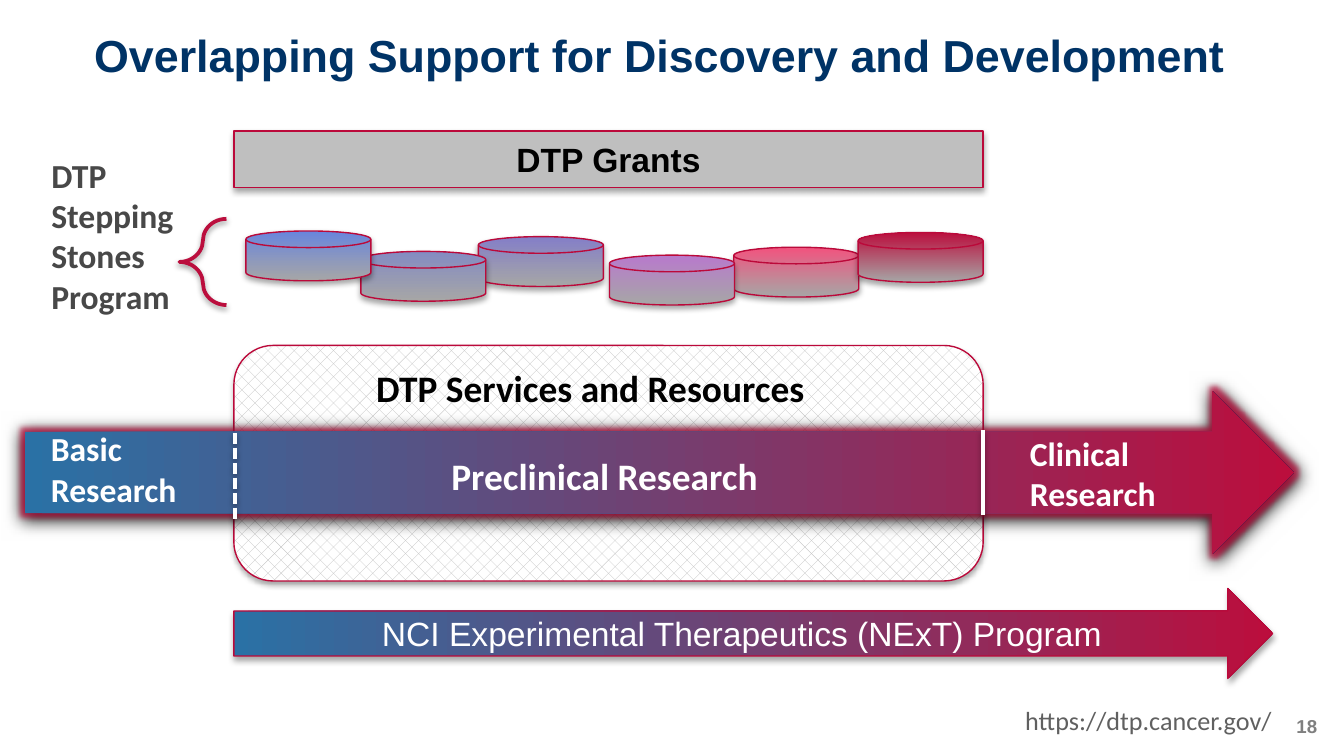
from lxml.etree import SubElement
from pptx import Presentation
from pptx.dml.color import RGBColor
from pptx.enum.dml import MSO_LINE, MSO_PATTERN
from pptx.enum.shapes import MSO_CONNECTOR, MSO_SHAPE
from pptx.enum.text import MSO_ANCHOR, PP_ALIGN
from pptx.oxml.ns import qn
from pptx.util import Inches, Pt

COLORS = {name: RGBColor.from_string(value) for name, value in {
    "navy": "003366", "blue": "2A71A5", "crimson": "BB0E3D", "outline": "BB093A",
    "silver": "BFBFBF", "stone": "A6A6A6", "white": "FFFFFF", "black": "000000",
    "label": "484848", "link": "606060", "number": "7F7F7F",
}.items()}

deck = Presentation()
deck.slide_width = Inches(10)
deck.slide_height = deck.slide_width * 9 // 16
column, row = deck.slide_width / 100, deck.slide_height / 100
page = deck.slides.add_slide(deck.slide_layouts[5])
shapes = page.shapes
soft, thin, strong = (35, 3.1, 1.8, 0), (38, 3.1, 1.6, 0), (100, 8.5, 1, 5)
shadows = []


def write(box, text, size, font, color, bold=True, align=PP_ALIGN.LEFT, anchor=MSO_ANCHOR.TOP, margin=None):
    frame = box.text_frame
    frame.word_wrap = True
    frame.vertical_anchor = anchor
    if margin is not None:
        for side in ("left", "top", "right", "bottom"):
            setattr(frame, f"margin_{side}", margin)
    para = frame.paragraphs[0]
    para.alignment = align
    span = para.add_run()
    span.text = text
    for name, value in {"size": Pt(size), "name": font, "bold": bold}.items():
        setattr(span.font, name, value)
    span.font.color.rgb = COLORS[color]
    return para


def draw(kind, left, top, width, height, stops=None, angle=0, line="outline", weight=0.75, shadow=soft):
    shape = shapes.add_shape(kind, int(left * column), int(top * row), int(width * column), int(height * row))
    if stops:
        shape.fill.gradient()
        shape.fill.gradient_angle = angle
        for stop, position, color in zip(shape.fill.gradient_stops, (0, 1), stops):
            stop.position = position
            stop.color.rgb = color
    else:
        shape.fill.background()
    if line:
        shape.line.color.rgb = COLORS[line]
        shape.line.width = Pt(weight)
    else:
        shape.line.fill.background()
    shadows.append((shape, shadow))
    return shape


title = shapes.title
for name, value in {"left": 4.4 * column, "top": 4.65 * row, "width": 89.3 * column, "height": 6.2 * row}.items():
    setattr(title, name, int(value))
heading = write(title, "Overlapping Support for Discovery and Development", 24, "Arial", "navy",
                align=PP_ALIGN.CENTER, anchor=MSO_ANCHOR.BOTTOM, margin=0)
heading.line_spacing = 0.9

services = draw(MSO_SHAPE.ROUNDED_RECTANGLE, 17.4, 45.7, 55.75, 31.15)
services.fill.patterned()
services.fill.pattern = MSO_PATTERN.PERCENT_30
services.fill.fore_color.rgb = COLORS["silver"]
services.fill.back_color.rgb = COLORS["white"]

progress = (COLORS["blue"], COLORS["crimson"])
draw(MSO_SHAPE.RIGHT_ARROW, 1.85, 51.75, 94.4, 21.5, progress, line=None, shadow=strong)

for left, top, bottom, dash in ((73.13, 56.9, 68.1, MSO_LINE.SOLID), (17.5, 57.25, 68.6, MSO_LINE.SQUARE_DOT)):
    divider = shapes.add_connector(MSO_CONNECTOR.STRAIGHT, int(left * column), int(top * row),
                                   int(left * column), int(bottom * row))
    divider.line.color.rgb = COLORS["white"]
    divider.line.width = Pt(2)
    divider.line.dash_style = dash
    shadows.append((divider, thin))

grants = draw(MSO_SHAPE.RECTANGLE, 17.4, 17.35, 55.75, 7.45)
grants.fill.solid()
grants.fill.fore_color.rgb = COLORS["silver"]
write(grants, "DTP Grants", 18, "Arial", "black", align=PP_ALIGN.CENTER, anchor=MSO_ANCHOR.MIDDLE)

for left, top, color in (
    (54.6, 32.7, "F2537E"), (63.85, 30.75, "BB0E3D"), (35.6, 31.3, "847FC7"),
    (45.35, 33.75, "B87ACC"), (26.85, 33.25, "848BC2"), (18.3, 30.55, "6985DD"),
):
    draw(MSO_SHAPE.FLOWCHART_MAGNETIC_DISK, left, top, 9.3, 6.6,
         (COLORS["stone"], RGBColor.from_string(color)), angle=90)

brace = draw(MSO_SHAPE.LEFT_BRACE, 13.35, 28.95, 3.5, 11.4, line="crimson", weight=2, shadow=thin)
brace.adjustments[0] = 0.69

program = draw(MSO_SHAPE.RIGHT_ARROW, 17.4, 77.85, 77.3, 11.9, progress)
write(program, "NCI Experimental Therapeutics (NExT) Program", 18, "Arial", "white", bold=False,
      align=PP_ALIGN.CENTER, anchor=MSO_ANCHOR.MIDDLE)

for text, left, top, width, height, size, color, bold in (
    ("Basic Research", 2.8, 55.8, 12.8, 12.6, 18, "white", True),
    ("Preclinical Research", 32.6, 59.05, 29.4, 7.8, 20, "white", True),
    ("Clinical Research", 75.65, 56.4, 17, 12.6, 18, "white", True),
    ("DTP Services and Resources", 27, 47.45, 41.1, 7.8, 20, "black", True),
    ("DTP Stepping Stones Program", 2.83, 19.58, 12.9, 23.3, 18, "label", True),
    ("https://dtp.cancer.gov/", 75.3, 92.3, 20.6, 6, 14, "link", False),
):
    box = shapes.add_textbox(int(left * column), int(top * row), int(width * column), int(height * row))
    write(box, text, size, "Calibri", color, bold)

number = shapes.add_textbox(int(94.6 * column), int(94.6 * row), int(3.4 * column), int(3.6 * row))
write(number, "18", 10, "Arial", "number", align=PP_ALIGN.RIGHT, margin=0)

for shape, (opacity, blur, distance, radius) in shadows:
    effects = SubElement(shape.element.spPr, qn("a:effectLst"))
    if radius:
        halo = SubElement(effects, qn("a:glow"), rad=str(Pt(radius)))
        hue = SubElement(halo, qn("a:srgbClr"), val=str(COLORS["crimson"]))
        SubElement(hue, qn("a:alpha"), val="75000")
    cast = SubElement(effects, qn("a:outerShdw"), blurRad=str(Pt(blur)), dist=str(Pt(distance)),
                      dir="5400000", rotWithShape="0")
    tint = SubElement(cast, qn("a:srgbClr"), val=str(COLORS["black"]))
    SubElement(tint, qn("a:alpha"), val=str(opacity * 1000))

deck.save("out.pptx")
